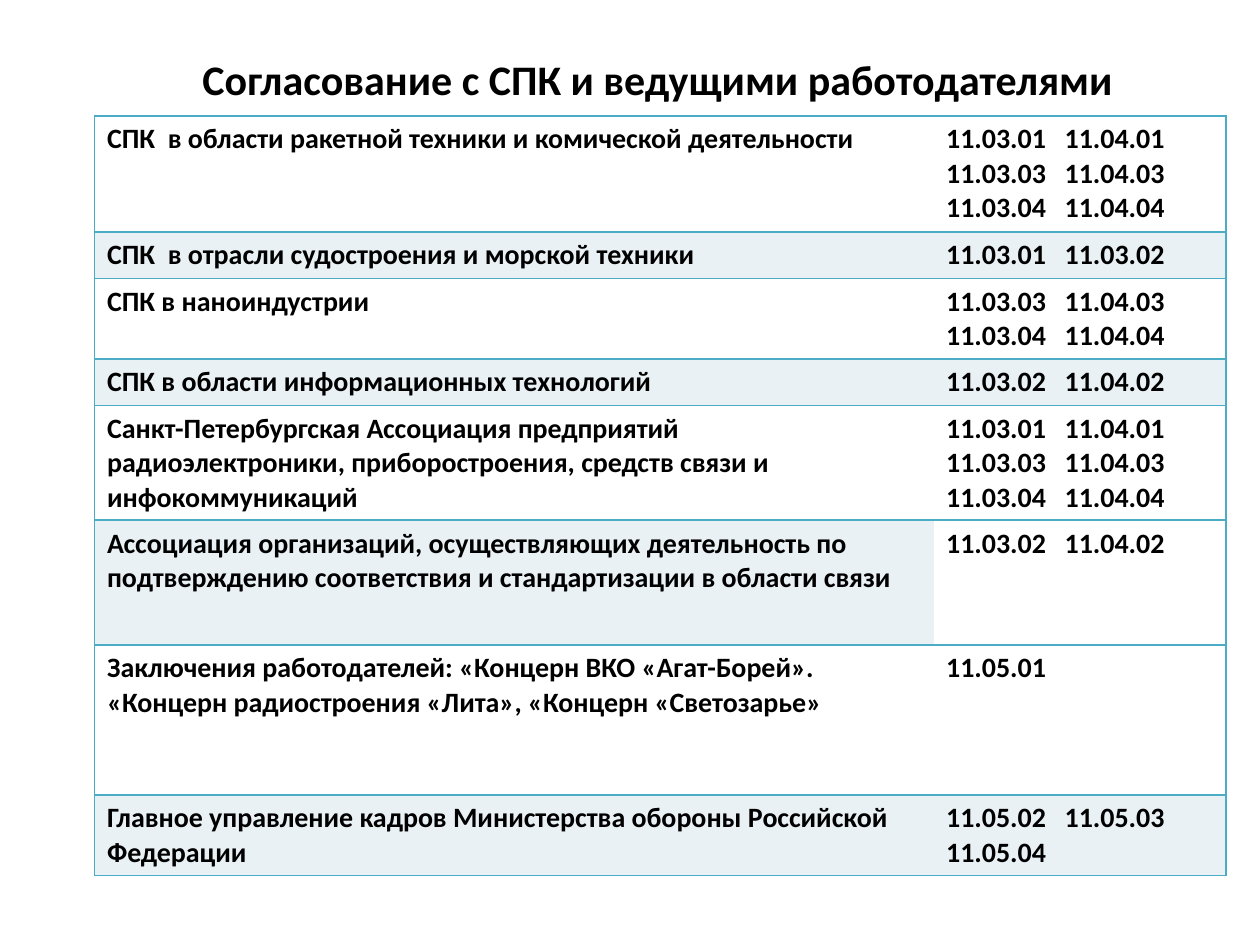
"""Build a slide listing the councils and employers that approved each programme."""
from lxml import etree
from pptx import Presentation
from pptx.dml.color import RGBColor
from pptx.enum.text import MSO_ANCHOR, PP_ALIGN
from pptx.oxml.ns import qn
from pptx.util import Inches, Pt

CENTER = PP_ALIGN.CENTER
MIDDLE = MSO_ANCHOR.MIDDLE
COLORS = {"text": "000000", "border": "4BACC6", "white": "FFFFFF", "band": "E9F1F5"}
TAB_STOP = Inches(0.94)
BORDER_WIDTH = Pt(1)

ROWS = [
    (0.92, "СПК  в области ракетной техники и комической деятельности",
     "11.03.01\t11.04.01\n11.03.03\t11.04.03\n11.03.04\t11.04.04"),
    (0.37, "СПК  в отрасли судостроения и морской техники", "11.03.01\t11.03.02"),
    (0.64, "СПК в наноиндустрии", "11.03.03\t11.04.03\n11.03.04\t11.04.04"),
    (0.37, "СПК в области информационных технологий", "11.03.02\t11.04.02"),
    (0.91, "Санкт-Петербургская Ассоциация предприятий радиоэлектроники, "
     "приборостроения, средств связи и инфокоммуникаций",
     "11.03.01\t11.04.01\n11.03.03\t11.04.03\n11.03.04\t11.04.04"),
    (0.99, "Ассоциация организаций, осуществляющих деятельность по "
     "подтверждению соответствия и стандартизации в области связи",
     "11.03.02\t11.04.02"),
    (1.19, "Заключения работодателей: «Концерн ВКО «Агат-Борей». "
     "«Концерн радиостроения «Лита», «Концерн «Светозарье»", "11.05.01"),
    (0.64, "Главное управление кадров Министерства обороны Российской Федерации",
     "11.05.02\t11.05.03\n11.05.04"),
]
UNBANDED_CODES_ROW = 5


def format_text(tf, size):
    for p in tf.paragraphs:
        for r in p.runs:
            r.font.name = "Calibri"
            r.font.size = Pt(size)
            r.font.bold = True
            r.font.color.rgb = RGBColor.from_string(COLORS["text"])


def add_border(cell, side, visible):
    ln = etree.SubElement(cell._tc.get_or_add_tcPr(), qn(f"a:ln{side}"))
    ln.set("w", str(BORDER_WIDTH))
    if visible:
        fill = etree.SubElement(ln, qn("a:solidFill"))
        etree.SubElement(fill, qn("a:srgbClr")).set("val", COLORS["border"])
    else:
        etree.SubElement(ln, qn("a:noFill"))


prs = Presentation()
prs.slide_width = Inches(10)
prs.slide_height = Inches(7.5)
s = prs.slides.add_slide(prs.slide_layouts[6])

title = s.shapes.add_textbox(Inches(0.72), Inches(0.35), Inches(9), Inches(0.55))
tf = title.text_frame
tf.word_wrap = True
tf.vertical_anchor = MIDDLE
tf.text = "Согласование с СПК и ведущими работодателями"
tf.paragraphs[0].alignment = CENTER
format_text(tf, 24)

height = sum(row[0] for row in ROWS)
table = s.shapes.add_table(len(ROWS), 2, Inches(0.75), Inches(0.92),
                           Inches(8.98), Inches(height)).table
table.first_row = False
table.horz_banding = False
table.columns[0].width = Inches(6.66)
table.columns[1].width = Inches(2.32)

for i, (row_height, body, codes) in enumerate(ROWS):
    table.rows[i].height = Inches(row_height)
    for j, text in enumerate((body, codes)):
        cell = table.cell(i, j)
        cell.text_frame.text = text
        format_text(cell.text_frame, 16)
        for side, visible in (("L", j == 0), ("R", j == 1), ("T", True), ("B", True)):
            add_border(cell, side, visible)
        banded = i % 2 == 1 and (i, j) != (UNBANDED_CODES_ROW, 1)
        cell.fill.solid()
        cell.fill.fore_color.rgb = RGBColor.from_string(COLORS["band" if banded else "white"])
    for p in table.cell(i, 1).text_frame.paragraphs:
        tabs = etree.SubElement(p._p.get_or_add_pPr(), qn("a:tabLst"))
        tab = etree.SubElement(tabs, qn("a:tab"))
        tab.set("pos", str(TAB_STOP))
        tab.set("algn", "l")

prs.save("out.pptx")
